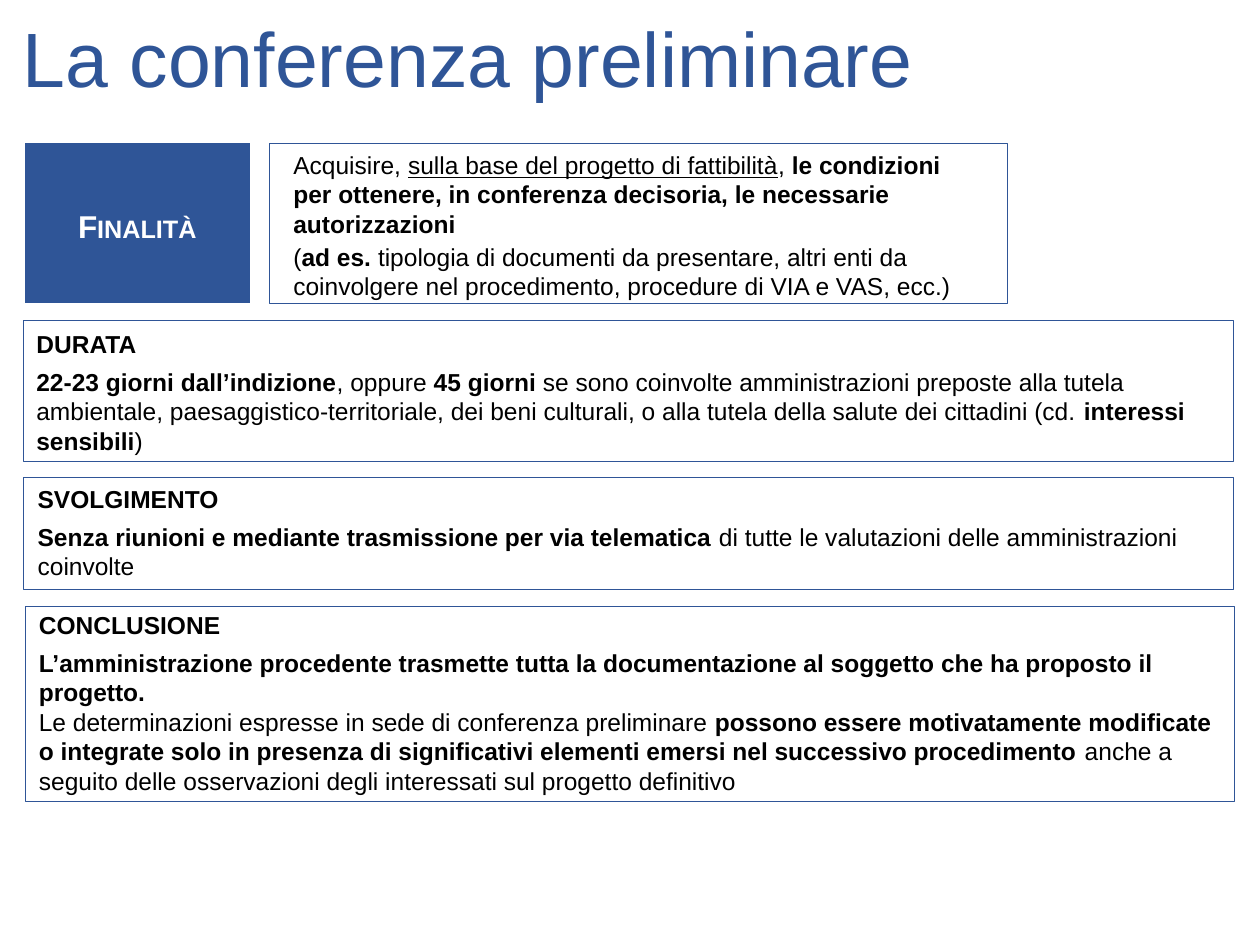
import copy
import pptx
import pptx.util
import pptx.dml.color
import pptx.enum.shapes
import pptx.enum.text
import pptx.oxml.ns
import lxml.etree

Pt = pptx.util.Pt
RGB = pptx.dml.color.RGBColor
BLUE = RGB(0x2F, 0x55, 0x97)
WHITE = RGB(0xFF, 0xFF, 0xFF)
BLACK = RGB(0, 0, 0)
RECT = pptx.enum.shapes.MSO_SHAPE.RECTANGLE
ANCHOR = pptx.enum.text.MSO_ANCHOR
ALIGN = pptx.enum.text.PP_ALIGN

deck = pptx.Presentation()
deck.slide_width = pptx.util.Inches(10)
deck.slide_height = pptx.util.Inches(7.5)
unit = deck.slide_width / 100
slide = deck.slides.add_slide(deck.slide_layouts[5])
slide.background.fill.solid()
slide.background.fill.fore_color.rgb = WHITE


def write(para, text, size=14, color=BLACK, bold=False, under=False, small=False, after=0):
    para.space_after = Pt(after)
    for part in text.split("*"):
        for row, line in enumerate(part.split("\n")):
            if row:
                para.add_line_break()
                para._p[-1].append(copy.deepcopy(run._r.rPr))
            if line:
                run = para.add_run()
                run.text = line
                run.font.name = "Arial"
                run.font.size = Pt(size)
                run.font.color.rgb = color
                run.font.bold = bold
                run.font.underline = under
                if small:
                    run._r.rPr.set("cap", "small")
        bold = not bold


def panel(spot, fill, line, width, alpha=None):
    shape = slide.shapes.add_shape(RECT, *[round(n * unit) for n in spot])
    shape.shadow.inherit = False
    shape.fill.solid()
    shape.fill.fore_color.rgb = fill
    shape.line.color.rgb = line
    shape.line.width = Pt(width)
    if alpha:
        tint = shape._element.spPr.find(".//" + pptx.oxml.ns.qn("a:srgbClr"))
        lxml.etree.SubElement(tint, pptx.oxml.ns.qn("a:alpha")).set("val", str(alpha * 1000))
    return shape


title = slide.shapes.title
title.left, title.top, title.width, title.height = [round(n * unit) for n in (0.8, 1.2, 86.2, 14.5)]
title.text_frame.vertical_anchor = ANCHOR.TOP
title.text_frame.word_wrap = True
head = title.text_frame.paragraphs[0]
head.alignment = ALIGN.LEFT
head.line_spacing = 0.9
write(head, "La conferenza preliminare", size=44, color=BLUE)

goal = panel((1.9, 11.3, 18, 12.8), BLUE, WHITE, 1).text_frame
goal.vertical_anchor = ANCHOR.MIDDLE
goal.margin_left = goal.margin_right = goal.margin_top = round(0.6 * unit)
goal.margin_bottom = 0
label = goal.paragraphs[0]
label.alignment = ALIGN.CENTER
label.line_spacing = Pt(20)
write(label, "Finalità", size=18, color=WHITE, bold=True, small=True, after=6)

parts = [
    ((1.9, 25.4, 96, 11.2), (1.9, 25.4, 94.9, 12.2), "DURATA", 2,
     "*22-23 giorni dall’indizione*, oppure *45 giorni *se sono coinvolte amministrazioni "
     "preposte alla tutela ambientale, paesaggistico-territoriale, dei beni culturali, o alla "
     "tutela della salute dei cittadini (cd. *interessi sensibili*)"),
    ((1.9, 37.9, 96, 8.9), (2, 37.7, 94.9, 9.1), "SVOLGIMENTO", 2,
     "*Senza riunioni e mediante trasmissione per via telematica *di tutte le valutazioni "
     "delle amministrazioni coinvolte"),
    ((2, 48.1, 96, 15.5), (2.1, 47.7, 94.9, 16), "CONCLUSIONE", 6,
     "*L’amministrazione procedente trasmette tutta la documentazione al soggetto che ha "
     "proposto il progetto. \n*Le determinazioni espresse in sede di conferenza preliminare "
     "*possono essere motivatamente modificate o integrate solo in presenza di significativi "
     "elementi emersi nel successivo procedimento* anche a seguito delle osservazioni degli "
     "interessati sul progetto definitivo"),
    ((21.4, 11.4, 58.6, 12.7), (22.3, 11.9, 56.3, 12.2), None, 2,
     "(*ad es. *tipologia di documenti da presentare, altri enti da coinvolgere nel "
     "procedimento, procedure di VIA e VAS, ecc.)"),
]
for frame, spot, name, gap, body in parts:
    panel(frame, WHITE, BLUE, 0.5, alpha=40)
    box = slide.shapes.add_textbox(*[round(n * unit) for n in spot]).text_frame
    box.word_wrap = True
    box.margin_left = round(unit)
    box.margin_right = box.margin_bottom = round(0.7 * unit)
    box.margin_top = round(0.7 * unit) if name else 0
    first = box.paragraphs[0]
    if name:
        write(first, name, bold=True, after=5)
    else:
        write(first, "Acquisire, ")
        write(first, "sulla base del progetto di fattibilità", under=True)
        write(first, ", *le condizioni per ottenere, in conferenza decisoria, "
                     "le necessarie autorizzazioni", after=gap)
    write(box.add_paragraph(), body, after=gap)

deck.save("out.pptx")
